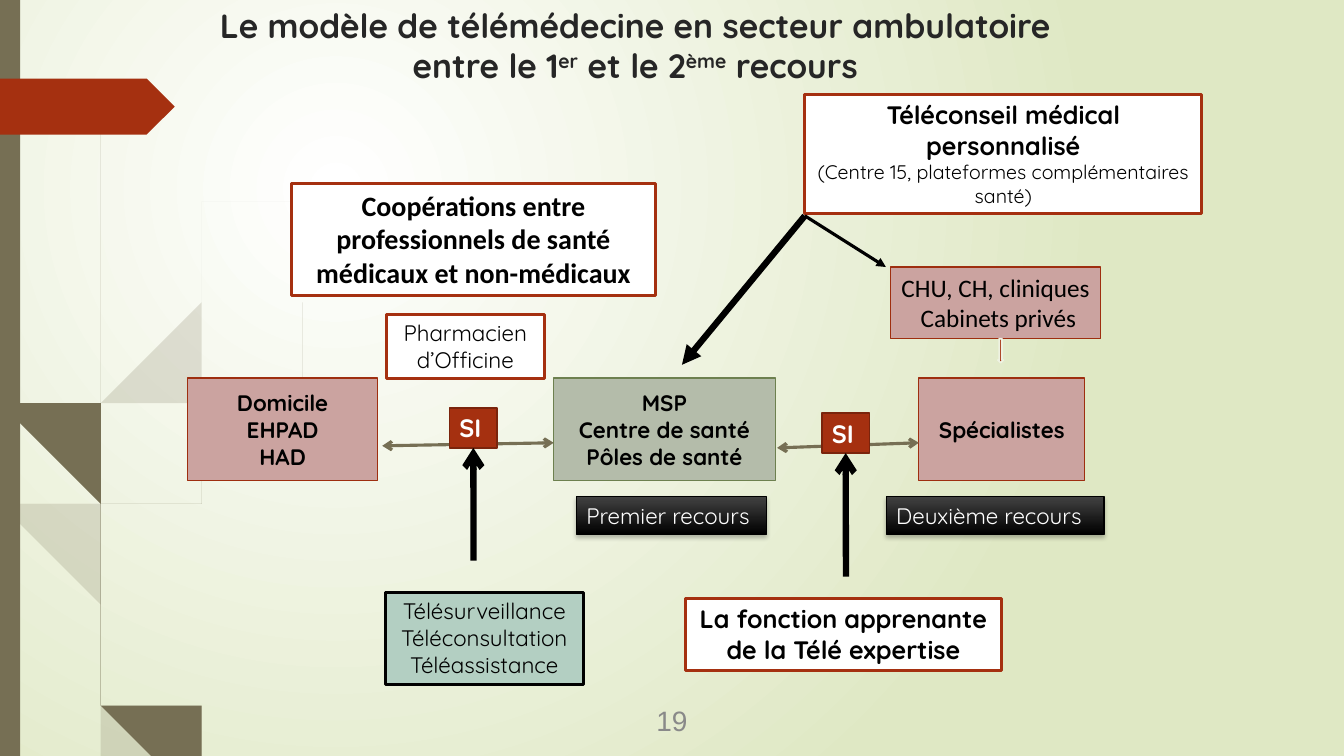
from pptx import Presentation
from pptx.dml.color import RGBColor
from pptx.enum.shapes import MSO_CONNECTOR, MSO_SHAPE
from pptx.enum.text import MSO_ANCHOR, PP_ALIGN
from pptx.oxml import parse_xml
from pptx.oxml.ns import nsdecls
from pptx.util import Inches, Pt

RECT, FLAG, DOWN = MSO_SHAPE.RECTANGLE, MSO_SHAPE.PENTAGON, MSO_SHAPE.DOWN_ARROW
LEFT, MID = PP_ALIGN.LEFT, PP_ALIGN.CENTER
TOP, CORE = MSO_ANCHOR.TOP, MSO_ANCHOR.MIDDLE
WIDE, HIGH = 13.33, 7.5
SAND, RUST, ROSE, BLACK, WHITE = "766F54", "A53010", "CBA3A0", "000000", "FFFFFF"

# Edges of the grass blades, in inches: alpha, left edge, right edge
BLADES = [
    (20, [(0, 2.99), (.11, 3.5), (.28, 4.7), (.65, 6.21), (1.01, 7.14), (1.14, 7.5)],
     [(0, 2.82), (.11, 3.5), (.31, 4.69), (.7, 6.19), (.93, 6.83), (1.19, 7.5)]),
    (20, [(.14, 3.45), (.17, 3.76), (.58, 5.22), (.88, 6.1), (1.23, 6.94), (1.5, 7.5)],
     [(.14, 3.45), (.62, 5.2), (.88, 5.96), (1.27, 6.92), (1.55, 7.5)]),
    (20, [(3.12, 1.53), (2.28, 2.44), (1.58, 3.48), (1.07, 4.61), (.85, 5.84),
          (.87, 6.46), (.93, 6.83), (1.19, 7.5)],
     [(3.12, 1.53), (2.29, 2.45), (1.6, 3.49), (1.1, 4.62), (.88, 5.84),
      (.91, 6.46), (1.05, 7.11), (1.24, 7.5)]),
    (100, [(.03, 0), (.07, 1.1), (.17, 2.33), (.33, 3.55), (.57, 4.77), (.68, 5.57),
           (.93, 6.59), (1.17, 7.22), (1.31, 7.5)],
     [(.04, 0), (.08, 1.09), (.19, 2.32), (.36, 3.55), (.55, 4.53), (.72, 5.56),
      (.98, 6.57), (1.17, 7.1), (1.33, 7.5)]),
    (100, [(.7, 1.41), (.56, 2.45), (.52, 3.49), (.55, 4.49), (.64, 5.05), (.88, 5.92),
           (1.11, 6.56), (1.32, 7.08), (1.52, 7.5)],
     [(.7, 1.41), (.58, 2.45), (.54, 3.49), (.6, 4.72), (.93, 5.9), (1.13, 6.49),
      (1.36, 7.06), (1.57, 7.5)]),
    (100, [(2.6, 3.44), (2.04, 4.05), (1.56, 4.74), (1.22, 5.51), (1.06, 6.31),
           (1.1, 6.91), (1.17, 7.22), (1.31, 7.5)],
     [(2.61, 3.44), (2.05, 4.06), (1.58, 4.76), (1.25, 5.52), (1.11, 6.33),
      (1.11, 6.56), (1.22, 7.19), (1.36, 7.5)]),
]


def tint(code):
    return RGBColor.from_string(code)


def spot(box, x, y):
    """Point at shares x, y of a box."""
    return box[0] + x * box[2], box[1] + y * box[3]


def part(box, x, y, w, h):
    """Box at shares of another box."""
    return *spot(box, x, y), w * box[2], h * box[3]


def say(shape, lines, size=16, font="Quicksand", color=BLACK, bold=False,
        align=MID, anchor=TOP, wrap=True):
    """Each line is a string or a list of (text, overrides)."""
    frame = shape.text_frame
    frame.word_wrap, frame.vertical_anchor = wrap, anchor
    for i, line in enumerate(lines):
        para = frame.add_paragraph() if i else frame.paragraphs[0]
        para.alignment = align
        for text, more in [(line, {})] if isinstance(line, str) else line:
            run = para.add_run()
            run.text = text
            run.font.name, run.font.color.rgb = font, tint(color)
            run.font.size = Pt(more.get("size", size))
            run.font.bold = more.get("bold", bold)
            if "base" in more:
                run.font._element.set("baseline", str(more["base"] * 1000))


def note(slide, box, lines, **style):
    say(slide.shapes.add_textbox(*map(Inches, box)), lines, **style)


def block(slide, box, fill, line=None, width=.75, lines=(), kind=RECT, **style):
    shape = slide.shapes.add_shape(kind, *map(Inches, box))
    shape.shadow.inherit = False
    shape.fill.solid()
    shape.fill.fore_color.rgb = tint(fill)
    if line:
        shape.line.color.rgb, shape.line.width = tint(line), Pt(width)
    else:
        shape.line.fill.background()
    if lines:
        say(shape, lines, **style)
    return shape


def label(slide, box, text):
    """Dark gradient tag with a soft shadow."""
    shape = block(slide, box, BLACK, BLACK, lines=[text], color=WHITE, align=LEFT)
    shape.fill.gradient()
    shape.fill.gradient_angle = 270
    for stop, code, place in zip(shape.fill.gradient_stops, ("414141", BLACK), (0, 1)):
        stop.color.rgb, stop.position = tint(code), place
    shape._element.spPr.find("{*}effectLst").append(parse_xml(
        f'<a:outerShdw {nsdecls("a")} blurRad="{Pt(3)}" dist="{Pt(2)}" dir="5400000">'
        '<a:srgbClr val="000000"><a:alpha val="25000"/></a:srgbClr></a:outerShdw>'))


def arrow(slide, start, end, color=BLACK, width=4.5, tail="arrow", head=None):
    wire = slide.shapes.add_connector(MSO_CONNECTOR.STRAIGHT, *map(Inches, (*start, *end)))
    wire.line.color.rgb, wire.line.width = tint(color), Pt(width)
    line = wire.line._get_or_add_ln()
    for tag, kind in (("headEnd", head), ("tailEnd", tail)):
        if kind:
            line.append(parse_xml(f'<a:{tag} {nsdecls("a")} type="{kind}"/>'))
    wire._element.spPr.append(parse_xml(f'<a:effectLst {nsdecls("a")}/>'))
    return wire


def curve(dots, steps=6):
    """Smooth path through all the dots."""
    ends = [dots[0], *dots, dots[-1]]
    path = [dots[0]]
    for a, b, c, d in zip(ends, ends[1:], ends[2:], ends[3:]):
        for t in (k / steps for k in range(1, steps + 1)):
            path.append(tuple(
                q + t * (r - p) / 2 + t * t * (p - 2.5 * q + 2 * r - s / 2)
                + t ** 3 * (1.5 * (q - r) + (s - p) / 2)
                for p, q, r, s in zip(a, b, c, d)))
    return path


def decor(slide, box):
    # Background
    back = slide.background.fill
    back.gradient()
    back.gradient_stops[0].color.rgb = tint(WHITE)
    back.gradient_stops[1].color.rgb = tint("DFE8C4")
    for stop, place in zip(back.gradient_stops, (0, 1)):
        stop.position = place
    grad = slide._element.cSld.find(".//{*}gradFill")
    grad.replace(grad.find("{*}lin"), parse_xml(
        f'<a:path {nsdecls("a")} path="circle">'
        '<a:fillToRect l="50000" t="50000" r="100000" b="100000"/></a:path>'))
    # Grass
    for alpha, left, right in BLADES:
        edge = [spot(box, x / WIDE, y / HIGH) for x, y in curve(left) + curve(right)[::-1]]
        pen = slide.shapes.build_freeform(*edge[0], scale=Inches(1))
        pen.add_line_segments(edge[1:])
        blade = pen.convert_to_shape()
        blade.shadow.inherit = False
        blade.fill.solid()
        blade.fill.fore_color.rgb = tint(SAND)
        blade.line.fill.background()
        if alpha < 100:
            blade._element.spPr.find("{*}solidFill")[0].append(
                parse_xml(f'<a:alpha {nsdecls("a")} val="{alpha * 1000}"/>'))
    # Side band and flag
    block(slide, part(box, 0, 0, .015, 1), SAND)
    block(slide, part(box, 0, .104, .13, .074), RUST, kind=FLAG)


def chain(slide, box):
    """Row of care levels; returns the two SI squares."""
    for x, w, fill, line, lines in (
            (0, .212, ROSE, "9E2E0F", ["Domicile", "EHPAD", "HAD"]),
            (.408, .247, "B4BCAA", "6D804F", ["MSP", "Centre de santé", "Pôles de santé"]),
            (.815, .185, ROSE, "9E2E0F", ["Spécialistes"])):
        block(slide, part(box, x, 0, w, 1), fill, line, lines=lines, bold=True, anchor=CORE)
    for x, y, end in ((.217, .66, .408), (.657, .68, .815)):
        arrow(slide, spot(box, x, y), spot(box, end, .63), SAND, 2.25, head="arrow")
    return [block(slide, part(box, x, y, .053, .39), RUST, "7A240C", 1.25, ["SI"],
                  size=18, color=WHITE, bold=True, align=LEFT)
            for x, y in ((.292, .29), (.707, .34))]


def base(slide, box, squares):
    """Levels of recourse and the services feeding each SI."""
    label(slide, part(box, .266, 0, .264, .2), "Premier recours")
    label(slide, part(box, .697, 0, .303, .2), "Deuxième recours")
    block(slide, part(box, 0, .51, .276, .49), "B3CFC2", BLACK, 2.25,
          ["Télésurveillance", "Téléconsultation", "Téléassistance"], wrap=False)
    block(slide, part(box, .418, .543, .439, .382), WHITE, RUST, 2.25,
          ["La fonction apprenante", "de la Télé expertise"], size=18, bold=True, wrap=False)
    for square, x, y in zip(squares, (.123, .641), (.34, .425)):
        start = spot(box, x, y)
        arrow(slide, start, (start[0], box[1])).end_connect(square, 2)


def upper(slide, box):
    """Advice, cooperation and partners above the row."""
    block(slide, part(box, .658, .606, .231, .252), ROSE, "9E2E0F",
          lines=["CHU, CH, cliniques", " Cabinets privés"],
          size=18, font="Calibri", wrap=False)
    block(slide, part(box, .776, .858, .006, .085), RUST, "EEF2E2", 1.25, kind=DOWN)
    block(slide, part(box, .564, 0, .436, .418), WHITE, RUST, 2.25,
          ["Téléconseil médical personnalisé",
           [("(Centre 15, plateformes complémentaires santé)", {"size": 14, "bold": False})]],
          size=18, bold=True)
    block(slide, part(box, 0, .312, .4, .394), WHITE, RUST, 2.25,
          ["Coopérations entre professionnels de santé", "médicaux et non-médicaux"],
          size=20, font="Calibri", bold=True)
    block(slide, part(box, .104, .773, .174, .227), WHITE, RUST, 2.25,
          ["Pharmacien d’Officine"])
    for x, y, width in ((.429, .95, 4.5), (.653, .606, 2.25)):
        arrow(slide, spot(box, .564, .426), spot(box, x, y), width=width, tail="triangle")


def main():
    deck = Presentation()
    deck.slide_width, deck.slide_height = Inches(WIDE), Inches(HIGH)
    slide = deck.slides.add_slide(deck.slide_layouts[6])
    decor(slide, (0, 0, WIDE, HIGH))
    note(slide, (1.67, 0, 9.26, 1.25), [[
        ("Le modèle de télémédecine en secteur ambulatoire entre le 1", {}),
        ("er", {"base": 30}), (" et le 2", {}), ("ème", {"base": 30}), (" recours", {})]],
        size=24, color="262626", bold=True)
    note(slide, (5.08, 6.95, 3.17, .4), ["19"], size=20, font="Arial",
         color="898989", anchor=CORE)
    squares = chain(slide, (1.86, 3.75, 8.9, 1.02))
    base(slide, (3.82, 4.93, 7.13, 1.86), squares)
    upper(slide, (2.89, .94, 9.03, 2.82))
    deck.save("out.pptx")


if __name__ == "__main__":
    main()
